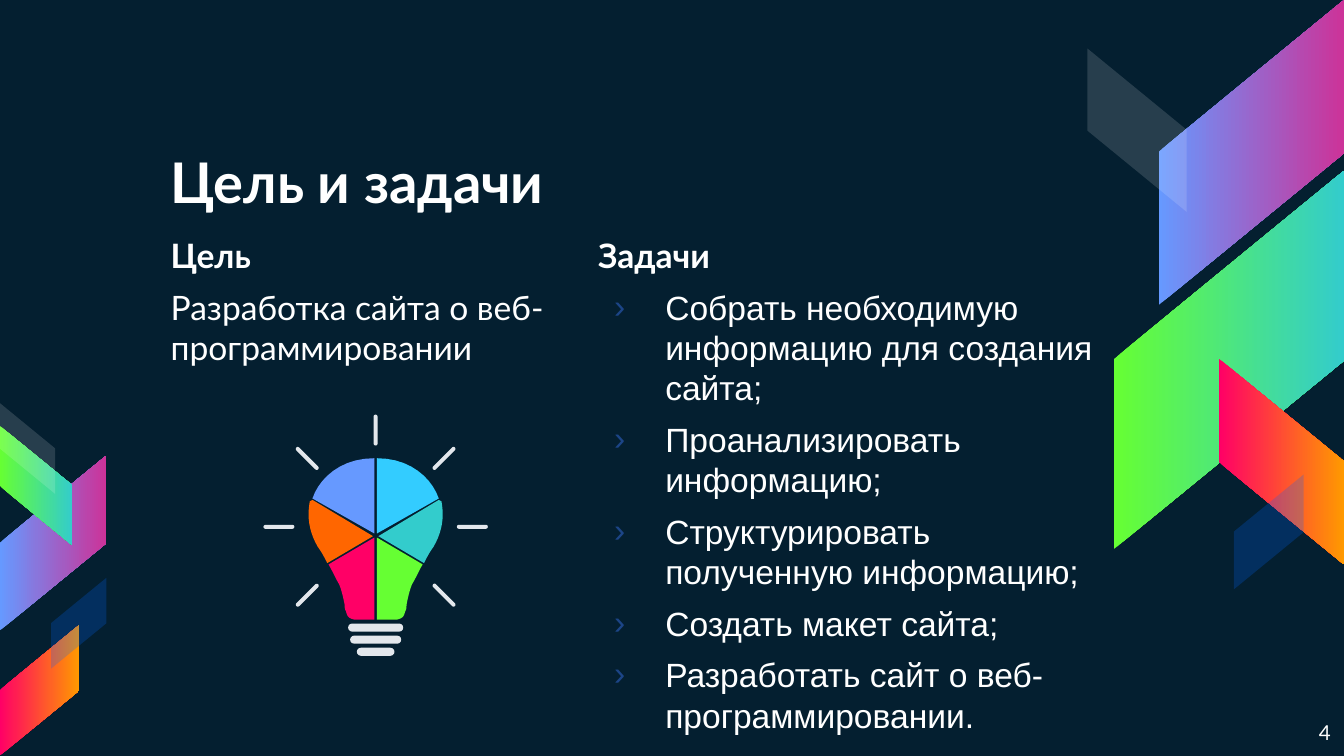
import math

from lxml import etree
from pptx import Presentation
from pptx.dml.color import RGBColor
from pptx.enum import shapes, text
from pptx.oxml.ns import qn
from pptx.util import Inches, Pt

COLORS = {
    "background": "041F30", "white": "FFFFFF", "bullet": "1C4587", "light": "E3E7EC",
    "magenta": "CC3399", "blue": "6699FF", "teal": "33CCCC", "green": "66FF33",
    "pink": "FF0066", "amber": "FF9900", "navy": "0066FF", "orange": "FF6600",
    "sky": "33CCFF",
}
BAND_RATIO = 1.645  # height of a slanted band over its width
BAND_SLANT = 0.819

# Band: left, top, width (inches in the region), rising, colours left to right, opacity %
RIGHT_BANDS = [
    (0.53, 0, 1.38, True, ("blue", "magenta"), 100),
    (0.2, 1.27, 1.71, True, ("green", "teal"), 100),
    (0.98, 2.67, 0.93, False, ("pink", "amber"), 100),
    (0, 0.36, 0.74, False, ("white",), 14),
    (1.09, 3.53, 0.52, True, ("navy",), 23),
]
LEFT_BANDS = [
    (0, 0.39, 0.79, True, ("blue", "magenta"), 100),
    (0, 0.17, 0.54, False, ("green", "teal"), 100),
    (0, 1.65, 0.59, True, ("pink", "amber"), 100),
    (0, 0, 0.41, False, ("white",), 14),
    (0.38, 1.3, 0.41, True, ("navy",), 23),
]

# Half of the glass: left colour, right colour, outline as distance from the axis
# and depth from the top. Two numbers are a corner, six are a Bézier curve.
GLASS_SECTORS = [
    ("orange", "teal", [
        (0.43, 0.98), (0.4, 1.02, 0.38, 1.06, 0.36, 1.1), (0.02, 0.9), (0.47, 0.63),
        (0.49, 0.64), (0.51, 0.75, 0.5, 0.86, 0.43, 0.98)]),
    ("blue", "sky", [
        (0.47, 0.62), (0.01, 0.88), (0.01, 0.32), (0.26, 0.32, 0.42, 0.47, 0.47, 0.62)]),
    ("pink", "green", [
        (0.01, 1.52), (0.01, 0.91), (0.35, 1.11), (0.32, 1.16, 0.3, 1.21, 0.27, 1.26),
        (0.25, 1.31, 0.24, 1.36, 0.23, 1.41), (0.23, 1.43, 0.23, 1.44, 0.22, 1.46),
        (0.21, 1.5, 0.2, 1.51, 0.16, 1.52)]),
]

TASKS = [
    "Собрать необходимую информацию для создания сайта;",
    "Проанализировать информацию;",
    "Структурировать полученную информацию;",
    "Создать макет сайта;",
    "Разработать сайт о веб-программировании.",
]


def rgb(name):
    return RGBColor.from_string(COLORS[name])


def paint(shape, color):
    shape.shadow.inherit = False
    shape.line.fill.background()
    shape.fill.solid()
    shape.fill.fore_color.rgb = rgb(color)


def add_bands(slide, left, top, bands):
    """Add slanted bands with vertical sides, drawn as turned parallelograms."""
    group = slide.shapes.add_group_shape()
    for x, y, width, rising, colors, opacity in bands:
        height = width * BAND_RATIO
        shift = (height - width) / 2
        band = group.shapes.add_shape(
            shapes.MSO_SHAPE.PARALLELOGRAM, Inches(left + x - shift),
            Inches(top + y + shift), Inches(height), Inches(width))
        band.adjustments[0] = BAND_SLANT
        band.rotation = 270
        properties = band._element.spPr
        if rising:
            properties.find(qn("a:xfrm")).set("flipH", "1")
        paint(band, colors[0])
        if len(colors) > 1:
            band.fill.gradient()
            band.fill.gradient_angle = 270
            for stop, color in zip(band.fill.gradient_stops, colors):
                stop.color.rgb = rgb(color)
        else:
            color_element = properties.find(qn("a:solidFill"))[0]
            etree.SubElement(color_element, qn("a:alpha"), val=str(opacity * 1000))


def trace(outline, steps=10):
    """Turn corners and Bézier curves into a list of points."""
    points = []
    for part in outline:
        if len(part) == 2:
            points.append(part)
            continue
        controls = [points[-1], part[:2], part[2:4], part[4:]]
        for step in range(1, steps + 1):
            t = step / steps
            weights = [(1 - t) ** 3, 3 * t * (1 - t) ** 2, 3 * t * t * (1 - t), t ** 3]
            points.append(tuple(sum(w * c[i] for w, c in zip(weights, controls))
                                for i in (0, 1)))
    return points


def add_bulb(slide, left, top, width):
    group = slide.shapes.add_group_shape()
    axis = left + width / 2

    def add_pill(center_x, center_y, length, thickness, angle=0):
        pill = group.shapes.add_shape(
            shapes.MSO_SHAPE.ROUNDED_RECTANGLE, Inches(center_x - length / 2),
            Inches(center_y - thickness / 2), Inches(length), Inches(thickness))
        pill.adjustments[0] = 0.5
        pill.rotation = angle
        paint(pill, "light")

    for angle in range(-225, 46, 45):
        direction = math.radians(angle)
        add_pill(axis + 0.72 * math.cos(direction),
                 top + 0.83 + 0.72 * math.sin(direction), 0.23, 0.03, angle)
    for row, length in enumerate((0.41, 0.38, 0.28)):
        add_pill(axis, top + 1.58 + row * 0.09, length, 0.06)
    for left_color, right_color, outline in GLASS_SECTORS:
        for side, color in ((-1, left_color), (1, right_color)):
            points = [(Inches(axis + side * x), Inches(top + y)) for x, y in trace(outline)]
            builder = group.shapes.build_freeform(*points[0])
            builder.add_line_segments(points[1:], close=True)
            paint(builder.convert_to_shape(), color)


def place_text(shape, left, top, width, height, anchor=text.MSO_ANCHOR.TOP):
    """Set the box, margins and anchor, and return the text frame."""
    shape.left, shape.top = Inches(left), Inches(top)
    shape.width, shape.height = Inches(width), Inches(height)
    frame = shape.text_frame
    frame.margin_left = frame.margin_right = Inches(0.1)
    frame.margin_top = frame.margin_bottom = Inches(0.1)
    frame.word_wrap = True
    frame.auto_size = text.MSO_AUTO_SIZE.NONE
    frame.vertical_anchor = anchor
    return frame


def write(paragraph, words, size, font="Lato", bold=False, align=text.PP_ALIGN.LEFT):
    paragraph.alignment = align
    run = paragraph.add_run()
    run.text = words
    run.font.name = font
    run.font.size = Pt(size)
    run.font.bold = bold
    run.font.color.rgb = rgb("white")


def set_bullet(paragraph, character=None):
    properties = paragraph._p.get_or_add_pPr()
    if character is None:
        properties.set("marL", "0")
        properties.set("indent", "0")
        etree.SubElement(properties, qn("a:buNone"))
        return
    properties.set("marL", str(Inches(0.5)))
    properties.set("indent", str(Inches(-0.38)))
    color = etree.SubElement(properties, qn("a:buClr"))
    etree.SubElement(color, qn("a:srgbClr"), val=COLORS["bullet"])
    etree.SubElement(properties, qn("a:buFont"), typeface="Arial")
    etree.SubElement(properties, qn("a:buChar"), char=character)


def fill_column(frame, heading, items, font="Lato", bullet=None):
    paragraph = frame.paragraphs[0]
    paragraph.space_before = Pt(6)
    set_bullet(paragraph)
    write(paragraph, heading, 18, bold=True)
    for item in items:
        paragraph = frame.add_paragraph()
        paragraph.space_before = Pt(6)
        paragraph.line_spacing = 1.0
        set_bullet(paragraph, bullet)
        write(paragraph, item, 18, font)


def build_goals_slide(presentation):
    slide = presentation.slides.add_slide(presentation.slide_layouts[3])
    slide.background.fill.solid()
    slide.background.fill.fore_color.rgb = rgb("background")
    add_bands(slide, 8.09, 0, RIGHT_BANDS)
    add_bands(slide, 0, 3, LEFT_BANDS)

    title, goal, tasks = slide.placeholders
    frame = place_text(title, 1.17, 1, 6.53, 0.7, text.MSO_ANCHOR.BOTTOM)
    write(frame.paragraphs[0], "Цель и задачи", 30, bold=True)
    fill_column(place_text(goal, 1.17, 1.65, 3.26, 1.26), "Цель",
                ["Разработка сайта о веб-программировании"])
    fill_column(place_text(tasks, 4.35, 1.65, 3.91, 3.89), "Задачи", TASKS, "Arial", "›")

    number = slide.shapes.add_textbox(0, 0, 0, 0)
    frame = place_text(number, 9.36, 5.26, 0.64, 0.36)
    write(frame.paragraphs[0], "4", 11, align=text.PP_ALIGN.RIGHT)
    add_bulb(slide, 1.96, 3.09, 1.67)


def main():
    presentation = Presentation()
    presentation.slide_width = Inches(10)
    presentation.slide_height = presentation.slide_width * 9 // 16
    build_goals_slide(presentation)
    presentation.save("out.pptx")


if __name__ == "__main__":
    main()
